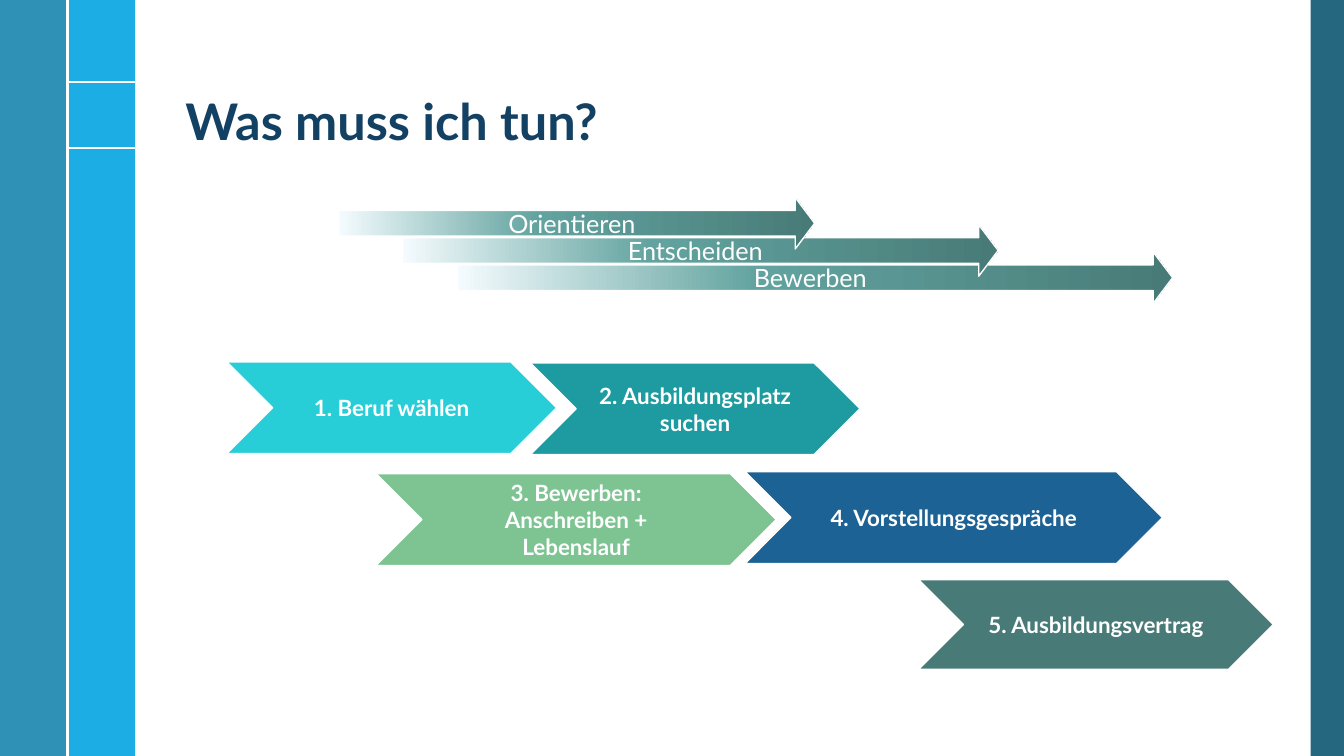
from copy import deepcopy

from lxml.etree import SubElement
from pptx import Presentation
from pptx.dml.color import RGBColor
from pptx.enum.shapes import MSO_CONNECTOR, MSO_SHAPE
from pptx.enum.text import MSO_ANCHOR, PP_ALIGN
from pptx.oxml.ns import qn
from pptx.util import Inches, Pt

COLORS = {
    "white": "FFFFFF", "title": "134163",
    "left_band": "1482AC", "icon_band": "1CADE4", "right_band": "0E5772",
    "fade_start": "F4FBFE", "fade_middle": "62A39F", "slate": "487B78",
    "cyan": "27CED7", "teal": "1D9BA1", "green": "7EC492", "blue": "1D6294",
}
RGB = {name: RGBColor.from_string(value) for name, value in COLORS.items()}

prs = Presentation()
prs.slide_width, prs.slide_height = Inches(13.33), Inches(7.5)
slide = prs.slides.add_slide(prs.slide_layouts[6])
shapes = slide.shapes


def add_labelled(preset, box, label, size, bold):
    """Add a white-outlined shape with a centred white label."""
    shape = shapes.add_shape(preset, *map(Inches, box))
    shape.shadow.inherit = False
    shape.line.color.rgb = RGB["white"]
    shape.line.width = Pt(1)
    frame = shape.text_frame
    frame.word_wrap = True
    frame.vertical_anchor = MSO_ANCHOR.MIDDLE
    paragraph = frame.paragraphs[0]
    paragraph.text = label
    paragraph.alignment = PP_ALIGN.CENTER
    paragraph.font.name = "Lato"
    paragraph.font.size = Pt(size)
    paragraph.font.bold = bold
    paragraph.font.color.rgb = RGB["white"]
    return shape


# Side bands: left, width, colour, opacity in percent
for left, width, color, opacity in [
    (13, 0.33, "right_band", 90),
    (0.67, 0.67, "icon_band", 100),
    (0, 0.67, "left_band", 88),
]:
    band = shapes.add_shape(MSO_SHAPE.RECTANGLE, Inches(left), 0, Inches(width), prs.slide_height)
    band.shadow.inherit = False
    band.line.fill.background()
    band.fill.solid()
    band.fill.fore_color.rgb = RGB[color]
    if opacity < 100:
        srgb = band._element.spPr.find(".//" + qn("a:srgbClr"))
        SubElement(srgb, qn("a:alpha")).set("val", str(opacity * 1000))

# White rules around the icon and between the left bands
for ends in [(0.67, 0.81, 1.34, 0.81), (0.67, 1.47, 1.34, 1.47), (0.67, 0, 0.67, 7.5)]:
    rule = shapes.add_connector(MSO_CONNECTOR.STRAIGHT, *map(Inches, ends))
    rule.line.color.rgb = RGB["white"]
    rule.line.width = Pt(1.5)
    SubElement(rule._element.spPr, qn("a:effectLst"))

# Pi icon: a pair is a corner, six numbers are a Bézier curve
PI_START = (1.18, 0.98)
PI_SEGMENTS = [
    (0.9, 0.98), (0.85, 0.98, 0.83, 1.03, 0.83, 1.04), (0.84, 1.05), (0.85, 1.05),
    (0.85, 1.05, 0.87, 1.01, 0.9, 1.01), (0.94, 1.01),
    (0.94, 1.05, 0.93, 1.22, 0.88, 1.27), (0.87, 1.28, 0.87, 1.28, 0.88, 1.29),
    (0.9, 1.29), (0.95, 1.23, 0.96, 1.05, 0.97, 1.01), (1.06, 1.01), (1.05, 1.22),
    (1.05, 1.22, 1.04, 1.26, 1.07, 1.29), (1.08, 1.3, 1.09, 1.3, 1.1, 1.3),
    (1.12, 1.3), (1.17, 1.3, 1.19, 1.23, 1.19, 1.22), (1.18, 1.21), (1.16, 1.22),
    (1.16, 1.22, 1.15, 1.27, 1.11, 1.28), (1.1, 1.28, 1.09, 1.28, 1.08, 1.27),
    (1.07, 1.26, 1.07, 1.23, 1.07, 1.22), (1.09, 1.01), (1.18, 1.01),
    (1.19, 1.01, 1.19, 1, 1.19, 1), (1.19, 0.99, 1.19, 0.98, 1.18, 0.98),
]
CURVE_STEPS = 8
outline = [PI_START]
for segment in PI_SEGMENTS:
    if len(segment) == 2:
        outline.append(segment)
        continue
    controls = [outline[-1], segment[:2], segment[2:4], segment[4:]]
    for step in range(1, CURVE_STEPS + 1):
        t = step / CURVE_STEPS
        weights = ((1 - t) ** 3, 3 * t * (1 - t) ** 2, 3 * t ** 2 * (1 - t), t ** 3)
        outline.append(tuple(
            sum(w * point[axis] for w, point in zip(weights, controls)) for axis in (0, 1)
        ))
builder = shapes.build_freeform(*PI_START, scale=Inches(1))
builder.add_line_segments(outline[1:], close=True)
pi_icon = builder.convert_to_shape()
pi_icon.shadow.inherit = False
pi_icon.fill.solid()
pi_icon.fill.fore_color.rgb = RGB["white"]
pi_icon.line.fill.background()

title = shapes.add_textbox(Inches(1.74), Inches(0.19), Inches(10.7), Inches(1.36))
title.text_frame.word_wrap = True
title.text_frame.vertical_anchor = MSO_ANCHOR.BOTTOM
heading = title.text_frame.paragraphs[0]
heading.text = "Was muss ich tun?"
heading.line_spacing = 0.9
heading.font.name = "Lato"
heading.font.size = Pt(36)
heading.font.bold = True
heading.font.color.rgb = RGB["title"]

# Phases, stacked upwards so that each overlaps the one below
FADE = [(0, "fade_start"), (0.42, "fade_middle"), (1, "slate")]
for row, (phase, left, width) in enumerate([
    ("Bewerben", 4.54, 7.09), ("Entscheiden", 3.99, 5.91), ("Orientieren", 3.36, 4.72),
]):
    arrow = add_labelled(MSO_SHAPE.RIGHT_ARROW, (left, 2.5 - 0.27 * row, width, 0.51), phase, 18, False)
    arrow.adjustments[1] = 0.378
    arrow.fill.gradient()
    arrow.fill.gradient_angle = 0
    stop_list = arrow._element.spPr.find(".//" + qn("a:gsLst"))
    stop_list.append(deepcopy(stop_list[0]))
    for stop, (position, color) in zip(arrow.fill.gradient_stops, FADE):
        stop.position = position
        stop.color.rgb = RGB[color]

for step_label, color, box in [
    ("1. Beruf wählen", "cyan", (2.25, 3.59, 3.27, 0.91)),
    ("2. Ausbildungsplatz suchen", "teal", (5.26, 3.6, 3.27, 0.91)),
    ("3. Bewerben:\nAnschreiben +\nLebenslauf", "green", (3.73, 4.7, 3.97, 0.91)),
    ("4. Vorstellungsgespräche", "blue", (7.39, 4.68, 4.14, 0.91)),
    ("5. Ausbildungsvertrag", "slate", (9.11, 5.75, 3.52, 0.89)),
]:
    chevron = add_labelled(MSO_SHAPE.CHEVRON, box, step_label, 16, True)
    chevron.fill.solid()
    chevron.fill.fore_color.rgb = RGB[color]

prs.save("out.pptx")
